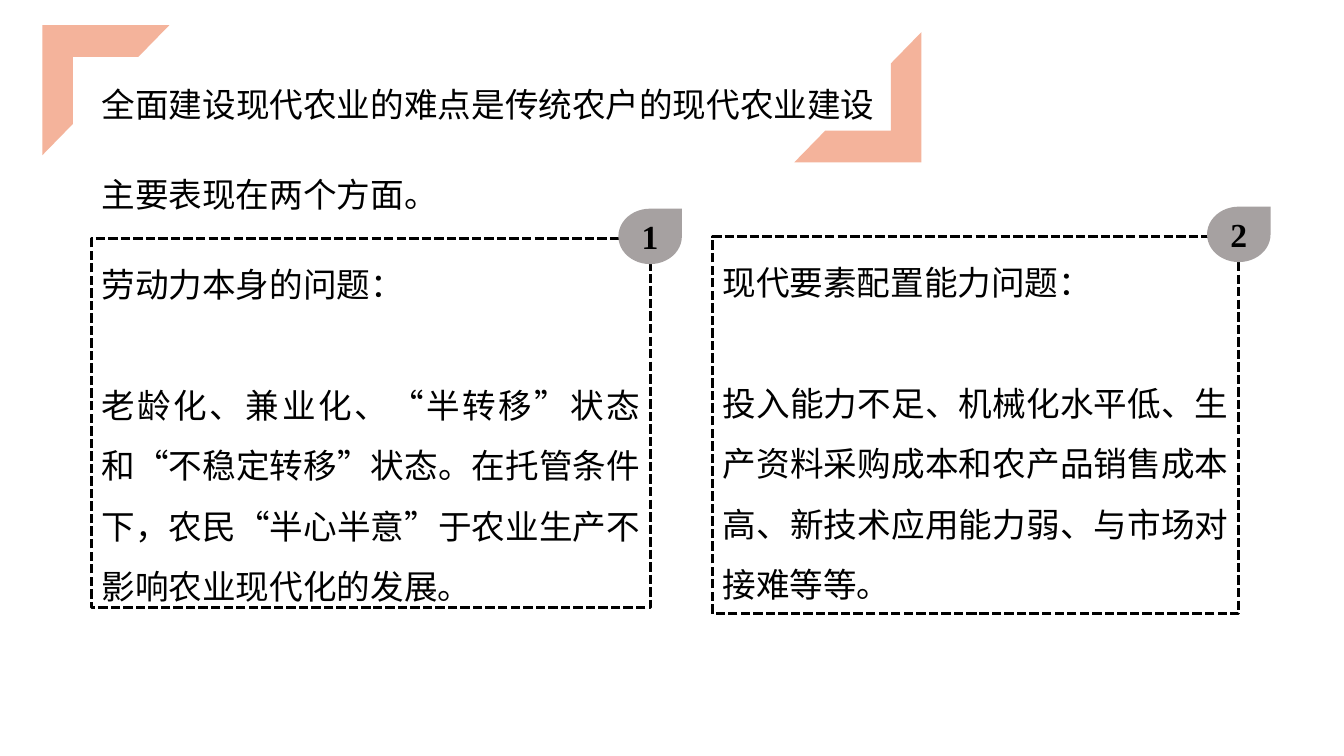
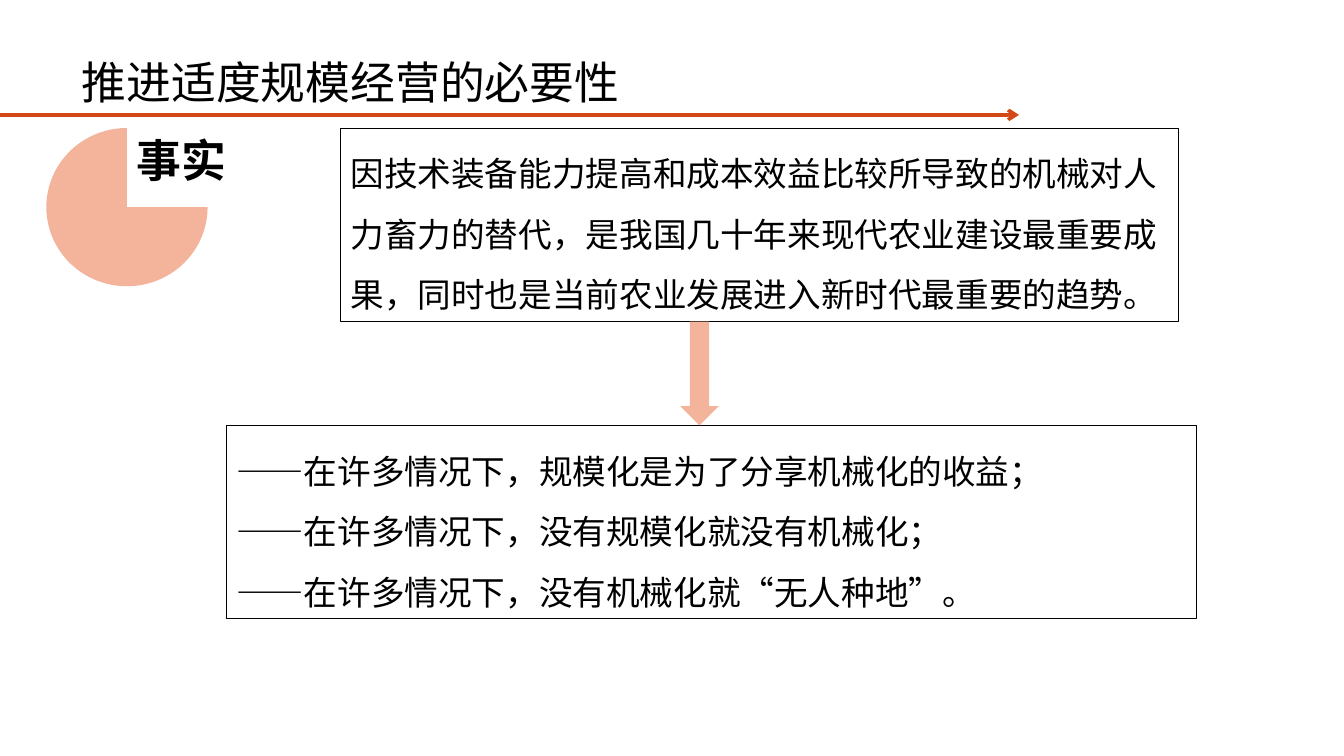
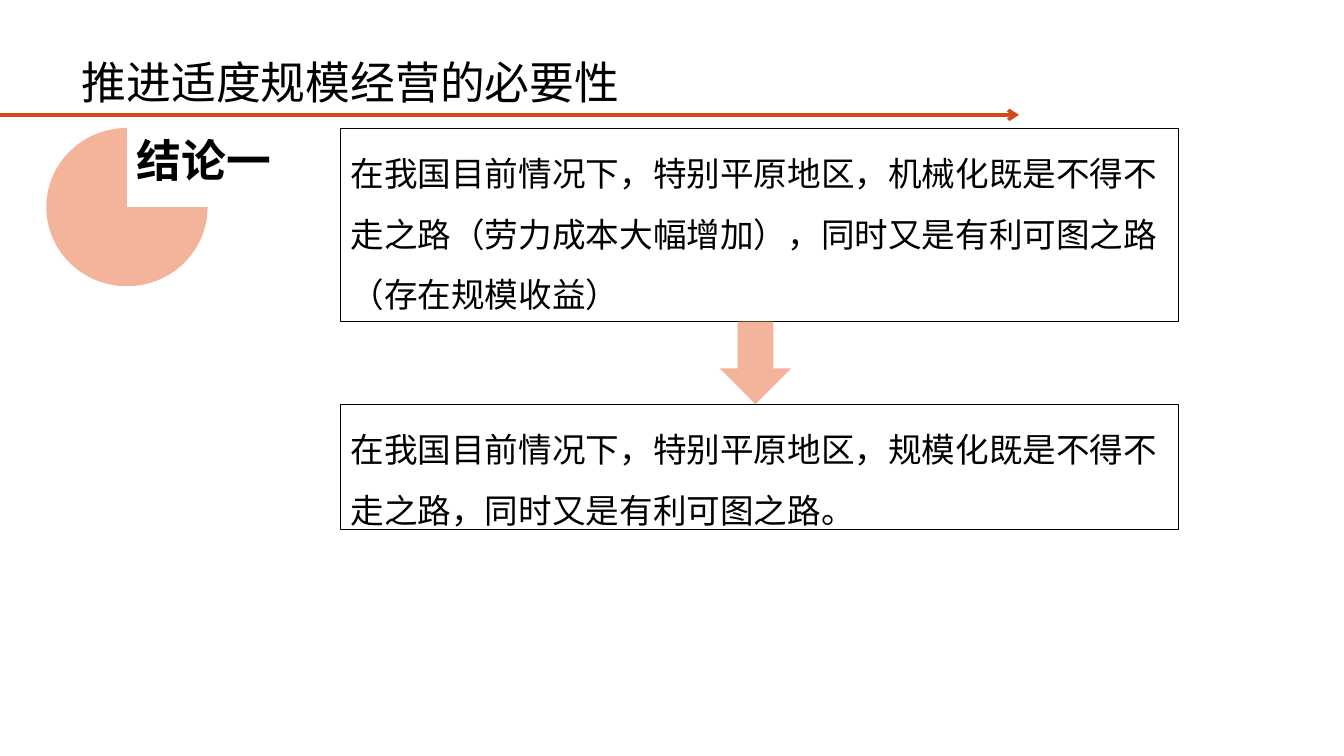
from pptx import Presentation
from pptx.dml.color import RGBColor
from pptx.enum.dml import MSO_LINE
from pptx.enum.shapes import MSO_CONNECTOR, MSO_SHAPE
from pptx.enum.text import MSO_ANCHOR, MSO_AUTO_SIZE, PP_ALIGN
from pptx.oxml import parse_xml
from pptx.oxml.ns import nsdecls
from pptx.util import Inches, Pt

BLACK = RGBColor(0x00, 0x00, 0x00)
PEACH = RGBColor(0xF4, 0xB3, 0x9B)
GREY = RGBColor(0xA6, 0xA1, 0xA1)
RUST = RGBColor(0xD3, 0x48, 0x17)
OUTLINE = RGBColor(0x7D, 0x7D, 0x7D)
SANS, SERIF = "Noto Sans CJK SC", "Times New Roman"

# Grid of square modules: 80 columns by 45 rows
COLS, ROWS = 80, 45
MODULE = Inches(1) / 6
BODY_LINE = Pt(43)


def grid(*lengths):
    return [round(n * MODULE) for n in lengths]


def xml(markup):
    return parse_xml(markup.replace(" ", f" {nsdecls('a')} ", 1))


class Deck:
    def __init__(self):
        self.prs = Presentation()
        self.prs.slide_width, self.prs.slide_height = grid(COLS, ROWS)
        self.s = None

    def set_text(self, sp, lines, size=24, font=SANS, bold=False, spacing=1.5,
                 align=PP_ALIGN.LEFT, anchor=MSO_ANCHOR.TOP, wrap=True):
        tf = sp.text_frame
        tf.text = "\n".join(lines)
        tf.auto_size = MSO_AUTO_SIZE.NONE
        tf.word_wrap = wrap
        tf.vertical_anchor = anchor
        for p in tf.paragraphs:
            p.alignment = align
            p.line_spacing = spacing
            p.space_before = Pt(0)
            for r in p.runs:
                r.font.size, r.font.bold, r.font.name = Pt(size), bold, font
                r.font.color.rgb = BLACK
                r._r.get_or_add_rPr().append(xml(f'<a:ea typeface="{font}"/>'))
        return tf

    def slide(self, title, at, size, align=PP_ALIGN.LEFT):
        self.s = self.prs.slides.add_slide(self.prs.slide_layouts[5])
        sp = self.s.shapes.title
        sp.left, sp.top, sp.width, sp.height = grid(*at)
        self.set_text(sp, [title], size, align=align)

    def text(self, lines, at, **style):
        return self.set_text(self.s.shapes.add_textbox(*grid(*at)), lines, **style)

    def shape(self, kind, at, fill=None, rotation=0):
        sp = self.s.shapes.add_shape(kind, *grid(*at))
        sp.shadow.inherit = False
        sp.rotation = rotation
        sp.line.fill.background()
        if fill is None:
            sp.fill.background()
        else:
            sp.fill.solid()
            sp.fill.fore_color.rgb = fill
        return sp

    def box(self, lines, at, width=0.75, dash=None, **style):
        sp = self.shape(MSO_SHAPE.RECTANGLE, at)
        sp.line.color.rgb = BLACK
        sp.line.width = Pt(width)
        if dash:
            sp.line.dash_style = dash
        return self.set_text(sp, lines, **style)

    def corner(self, x, y, rotation=0):
        sp = self.shape(MSO_SHAPE.HALF_FRAME, (x, y, 7.56, 7.74), PEACH, rotation)
        sp.adjustments[0], sp.adjustments[1] = 0.25, 0.24

    def numbered_box(self, number, heading, body, at):
        tf = self.box([heading, body], at, 2.25, MSO_LINE.SQUARE_DOT,
                      align=PP_ALIGN.JUSTIFY)
        tf.paragraphs[1].space_before = BODY_LINE
        # Badge centred on the right edge
        x, y, w, _ = at
        badge = self.shape(MSO_SHAPE.TEAR, (x + w - 1.89, y - 1.8, 3.78, 3.3), GREY)
        tf = self.set_text(badge, [number], font=SERIF, bold=True, spacing=1,
                           align=PP_ALIGN.CENTER, anchor=MSO_ANCHOR.MIDDLE, wrap=False)
        tf.margin_left = tf.margin_right = tf.margin_top = tf.margin_bottom = 0

    def arrow_rule(self, x, y):
        line = self.s.shapes.add_connector(MSO_CONNECTOR.STRAIGHT, *grid(0, y, x, y))
        line.line.color.rgb = RUST
        line.line.width = Pt(2.5)
        line.line._get_or_add_ln().append(xml('<a:tailEnd type="arrow"/>'))
        line._element.spPr.append(xml("<a:effectLst />"))

    def pie_label(self, label):
        self.shape(MSO_SHAPE.PIE, (2.76, 7.62, 9.6, 9.42), PEACH)
        tf = self.text([label], (7.56, 7.62, 11.16, 3.84), size=32, bold=True, spacing=1)
        r = tf.paragraphs[0].runs[0]
        r._r.get_or_add_rPr().insert(0, xml(
            f'<a:ln w="{Pt(0.83)}"><a:solidFill><a:srgbClr val="{OUTLINE}"/>'
            "</a:solidFill></a:ln>"))

    def argument(self, label, premise, results, result_at, arrow_x, arrow_w):
        """Premise box, down arrow and result box under the shared title."""
        self.slide("推进适度规模经营的必要性", (4.26, 1.38, 60.66, 4.86), 32)
        self.arrow_rule(60.66, 6.84)
        top, height = 7.62, 11.52
        self.box([premise], (20.28, top, 49.86, height))
        self.pie_label(label)
        self.box(results, result_at)
        start = top + height
        self.shape(MSO_SHAPE.DOWN_ARROW,
                   (arrow_x, start, arrow_w, result_at[1] - start), PEACH)


def main():
    deck = Deck()

    # Two aspects of the difficulty
    left = 5.46
    deck.slide("全面建设现代农业的难点是传统农户的现代农业建设",
               (left, 3.48, 49.38, 3.84), 24, PP_ALIGN.JUSTIFY)
    deck.text(["主要表现在两个方面。"], (left, 8.88, 21.42, 3.84), wrap=False)
    deck.corner(2.52, 1.5)
    deck.corner(47.28, 1.92, 180)
    deck.numbered_box(
        "1", "劳动力本身的问题：",
        "老龄化、兼业化、“半转移”状态和“不稳定转移”状态。在托管条件下，"
        "农民“半心半意”于农业生产不影响农业现代化的发展。",
        (left, 14.22, 33.24, 21.96))
    deck.numbered_box(
        "2", "现代要素配置能力问题：",
        "投入能力不足、机械化水平低、生产资料采购成本和农产品销售成本高、"
        "新技术应用能力弱、与市场对接难等等。",
        (42.42, 14.1, 31.32, 22.44))

    # Fact
    deck.argument(
        "事实",
        "因技术装备能力提高和成本效益比较所导致的机械对人力畜力的替代，"
        "是我国几十年来现代农业建设最重要成果，同时也是当前农业发展进入新时代最重要的趋势。",
        ["——在许多情况下，规模化是为了分享机械化的收益；",
         "——在许多情况下，没有规模化就没有机械化；",
         "——在许多情况下，没有机械化就“无人种地”。"],
        (13.5, 25.32, 57.72, 11.52), 40.5, 2.28)

    # First conclusion
    deck.argument(
        "结论一",
        "在我国目前情况下，特别平原地区，机械化既是不得不走之路（劳力成本大幅增加），"
        "同时又是有利可图之路（存在规模收益）",
        ["在我国目前情况下，特别平原地区，规模化既是不得不走之路，同时又是有利可图之路。"],
        (20.28, 24.06, 49.86, 7.44), 42.84, 4.26)

    deck.prs.save("out.pptx")


if __name__ == "__main__":
    main()
